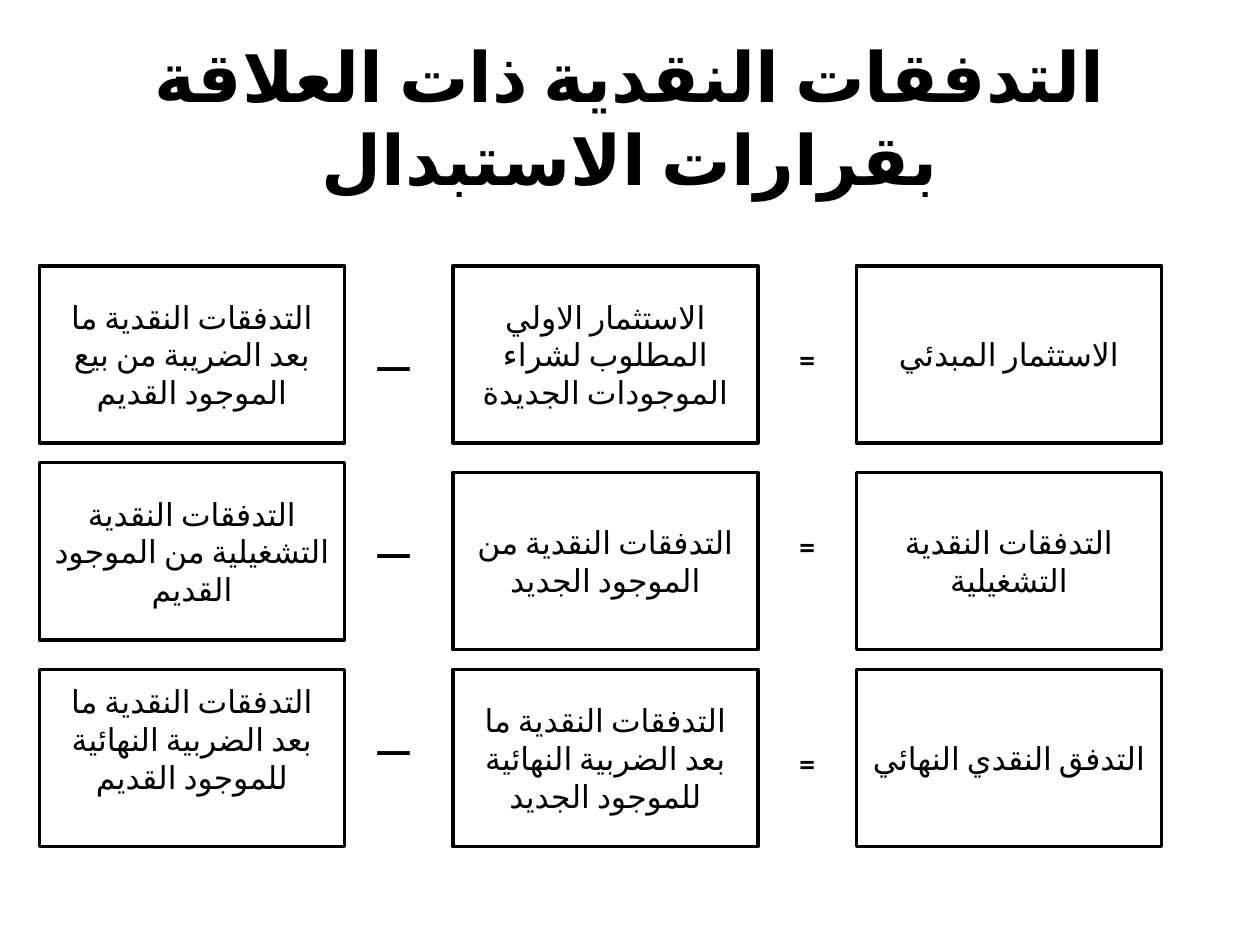
import dataclasses

import lxml.etree
import pptx
import pptx.dml.color
import pptx.enum.lang
import pptx.enum.shapes
import pptx.enum.text
import pptx.oxml.ns
import pptx.util

WIDTH, HEIGHT = pptx.util.Inches(10), pptx.util.Inches(7.5)
COLS, ROWS = 128, 96
BLACK, WHITE = "000000", "FFFFFF"
FONT = "Calibri"


@dataclasses.dataclass
class Box:
    text: str
    row: int
    foot: float = 0.05


@dataclasses.dataclass
class Line:
    boxes: tuple[Box, Box, Box]
    equal: int
    minus: int


BOX_COLS = (87, 46, 4)
EQUAL_COL, MINUS_COL = 78, 36
BOX_SIZE, SIGN_SIZE = (31, 18), (8, 3)

LINES = (
    Line((Box("الاستثمار المبدئي", 27),
          Box("الاستثمار الاولي المطلوب لشراء الموجودات الجديدة", 27),
          Box("التدفقات النقدية ما بعد الضريبة من بيع الموجود القديم", 27)),
         equal=35, minus=35),
    Line((Box("التدفقات النقدية التشغيلية", 48),
          Box("التدفقات النقدية من الموجود الجديد", 48),
          Box("التدفقات النقدية التشغيلية من الموجود القديم", 47)),
         equal=54, minus=54),
    Line((Box("التدفق النقدي النهائي", 68),
          Box("التدفقات النقدية ما بعد الضربية النهائية للموجود الجديد", 68),
          Box("التدفقات النقدية ما بعد الضربية النهائية للموجود القديم", 68, foot=0.35)),
         equal=76, minus=74),
)


def paint(code: str) -> pptx.dml.color.RGBColor:
    return pptx.dml.color.RGBColor.from_string(code)


def write(shape, text: str, *, size: float = 18, bold: bool = False,
          color: str = BLACK, foot: float = 0.05) -> None:
    frame = shape.text_frame
    frame.word_wrap = True
    frame.auto_size = pptx.enum.text.MSO_AUTO_SIZE.NONE
    frame.vertical_anchor = pptx.enum.text.MSO_ANCHOR.MIDDLE
    frame.margin_bottom = pptx.util.Inches(foot)
    para = frame.paragraphs[0]
    para.alignment = pptx.enum.text.PP_ALIGN.CENTER
    para._p.get_or_add_pPr().set("rtl", "1")
    run = para.add_run()
    run.text = text
    run.font.name = FONT
    run.font.size = pptx.util.Pt(size)
    run.font.bold = bold
    run.font.color.rgb = paint(color)
    run.font.language_id = pptx.enum.lang.MSO_LANGUAGE_ID.ARABIC
    lxml.etree.SubElement(run._r.rPr, pptx.oxml.ns.qn("a:cs"), typeface=FONT)


def place(shape, col: float, row: float, wide: float, high: float) -> None:
    shape.left, shape.top = int(WIDTH * col / COLS), int(HEIGHT * row / ROWS)
    shape.width, shape.height = int(WIDTH * wide / COLS), int(HEIGHT * high / ROWS)


def block(slide, col: int, row: int, size: tuple[int, int], edge: str):
    shape = slide.shapes.add_shape(
        pptx.enum.shapes.MSO_SHAPE.RECTANGLE, 0, 0, 0, 0)
    place(shape, col, row, *size)
    shape.shadow.inherit = False
    shape.fill.solid()
    shape.fill.fore_color.rgb = paint(WHITE)
    shape.line.color.rgb = paint(edge)
    shape.line.width = pptx.util.Pt(2)
    return shape


def main() -> None:
    deck = pptx.Presentation()
    deck.slide_width, deck.slide_height = WIDTH, HEIGHT
    slide = deck.slides.add_slide(deck.slide_layouts[5])
    title = slide.shapes.title
    place(title, COLS * 0.05, ROWS * 0.04, COLS * 0.9, ROWS / 6)
    write(title, "التدفقات النقدية ذات العلاقة بقرارات الاستبدال",
          size=39.6, bold=True)
    for line in LINES:
        for col, box in zip(BOX_COLS, line.boxes):
            shape = block(slide, col, box.row, BOX_SIZE, BLACK)
            write(shape, box.text, foot=box.foot)
    for line in LINES:
        for text, col, row in (("=", EQUAL_COL, line.equal),
                               ("ـــ", MINUS_COL, line.minus)):
            write(block(slide, col, row, SIGN_SIZE, WHITE), text, bold=True)
    deck.save("out.pptx")


if __name__ == "__main__":
    main()
